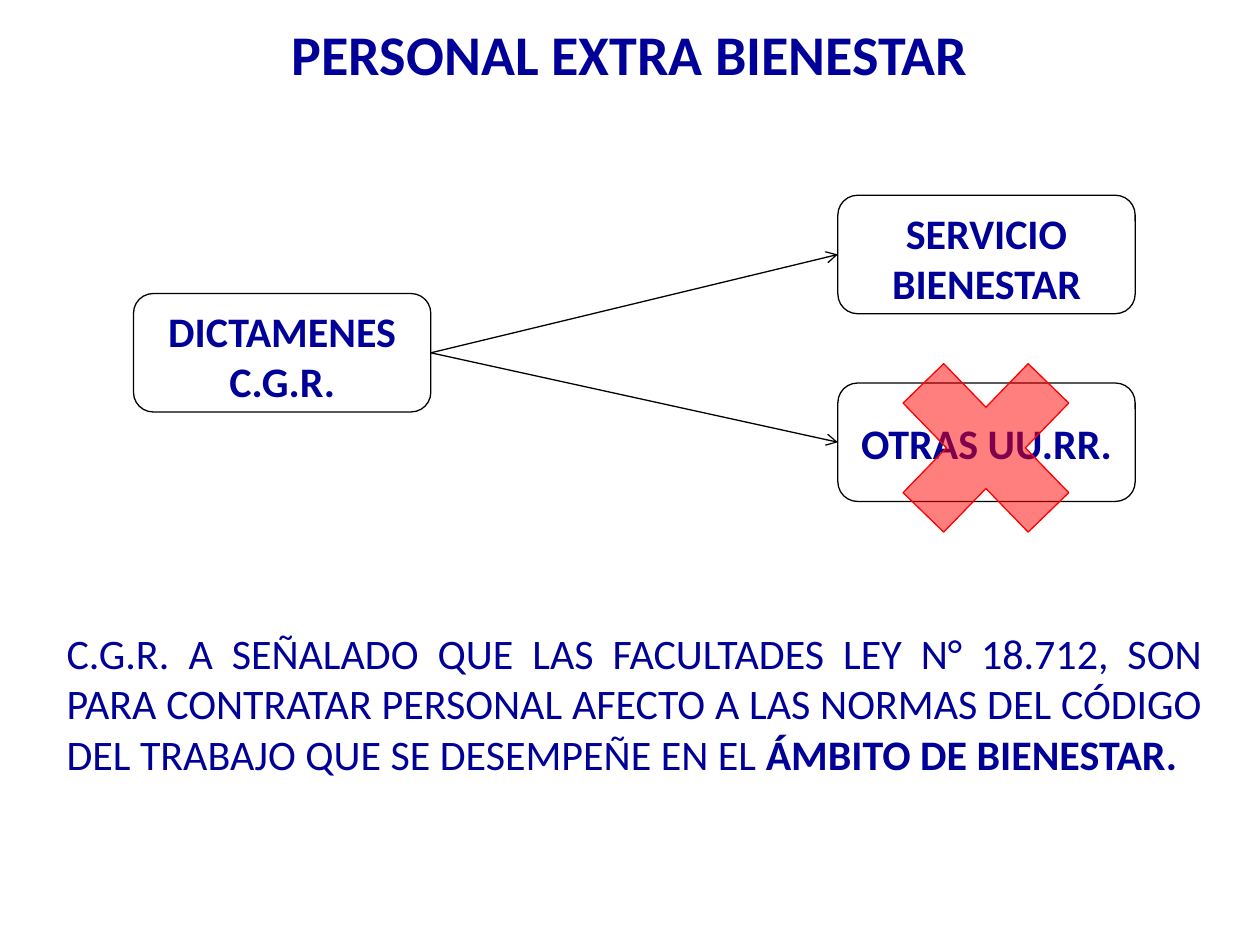
from lxml import etree
from pptx import Presentation
from pptx import util as u
from pptx.dml.color import RGBColor
from pptx.enum import shapes, text
from pptx.oxml import ns

NAVY = RGBColor(0x00, 0x00, 0x99)
BLACK = RGBColor(0x00, 0x00, 0x00)
WHITE = RGBColor(0xFF, 0xFF, 0xFF)
RED = RGBColor(0xFF, 0x00, 0x00)

LEFT_SIDE, RIGHT_SIDE = 1, 3
TOP, MIDDLE = text.MSO_ANCHOR.TOP, text.MSO_ANCHOR.MIDDLE
CENTER, JUSTIFY = text.PP_ALIGN.CENTER, text.PP_ALIGN.JUSTIFY


class SlideBuilder:
    font = {"name": "Calibri", "size": u.Pt(24), "bold": True}
    line_width = u.Pt(0.75)

    def __init__(self, slide):
        self.slide = slide

    def add_text(self, shape, paragraphs, align=CENTER, anchor=TOP, **changes):
        """Fill a shape with paragraphs, each a list of (text, format) runs."""
        frame = shape.text_frame
        frame.word_wrap = True
        frame.vertical_anchor = anchor
        for index, runs in enumerate(paragraphs):
            paragraph = frame.paragraphs[0] if index == 0 else frame.add_paragraph()
            paragraph.alignment = align
            for words, run_format in runs:
                run = paragraph.add_run()
                run.text = words
                for name, value in {**self.font, **changes, **run_format}.items():
                    setattr(run.font, name, value)
                run.font.color.rgb = NAVY

    def text_box(self, place, paragraphs, **style):
        box = self.slide.shapes.add_textbox(*map(u.Inches, place))
        self.add_text(box, paragraphs, **style)

    def preset(self, kind, place, fill, line):
        """Add a half-transparent preset shape."""
        shape = self.slide.shapes.add_shape(kind, *map(u.Inches, place))
        shape.shadow.inherit = False
        shape.fill.solid()
        shape.fill.fore_color.rgb = fill
        color = shape._element.spPr.find(ns.qn("a:solidFill")).find(ns.qn("a:srgbClr"))
        etree.SubElement(color, ns.qn("a:alpha"), val="50000")
        shape.line.color.rgb = line
        shape.line.width = self.line_width
        return shape

    def box(self, left, top, lines, anchor=TOP):
        place = (left, top, 2.36, 0.94)
        shape = self.preset(shapes.MSO_SHAPE.ROUNDED_RECTANGLE, place, WHITE, BLACK)
        self.add_text(shape, [[(line, {})] for line in lines], anchor=anchor)
        return shape

    def arrow(self, source, target):
        connector = self.slide.shapes.add_connector(
            shapes.MSO_CONNECTOR.STRAIGHT, 0, 0, 0, 0)
        connector.begin_connect(source, RIGHT_SIDE)
        connector.end_connect(target, LEFT_SIDE)
        connector.line.color.rgb = BLACK
        connector.line.width = self.line_width
        properties = connector._element.spPr
        etree.SubElement(properties.find(ns.qn("a:ln")), ns.qn("a:tailEnd"), type="arrow")
        etree.SubElement(properties, ns.qn("a:effectLst"))


def main():
    presentation = Presentation()
    presentation.slide_width, presentation.slide_height = u.Inches(10), u.Inches(7.5)
    builder = SlideBuilder(presentation.slides.add_slide(presentation.slide_layouts[6]))

    builder.text_box((0.75, 0.05, 8.5, 0.75), [[("PERSONAL EXTRA BIENESTAR", {})]],
                     anchor=MIDDLE, size=u.Pt(32))

    rulings = builder.box(1.06, 2.33, ["DICTAMENES", "C.G.R."])
    welfare = builder.box(6.65, 1.55, ["SERVICIO BIENESTAR"])
    other_units = builder.box(6.65, 3.04, ["OTRAS UU.RR."], anchor=MIDDLE)
    for target in (welfare, other_units):
        builder.arrow(rulings, target)
    builder.preset(shapes.MSO_SHAPE.MATH_MULTIPLY, (6.87, 2.57, 1.91, 1.97), RED, RED)

    conclusion = [
        ("C.G.R. A SEÑALADO QUE LAS FACULTADES LEY N° 18.712, SON PARA CONTRATAR "
         "PERSONAL AFECTO A LAS NORMAS DEL CÓDIGO DEL TRABAJO QUE SE DESEMPEÑE EN EL ",
         {"bold": False}),
        ("ÁMBITO DE BIENESTAR.", {}),
    ]
    builder.text_box((0.43, 4.93, 9.21, 1.5), [conclusion], align=JUSTIFY)

    presentation.save("out.pptx")


if __name__ == "__main__":
    main()
